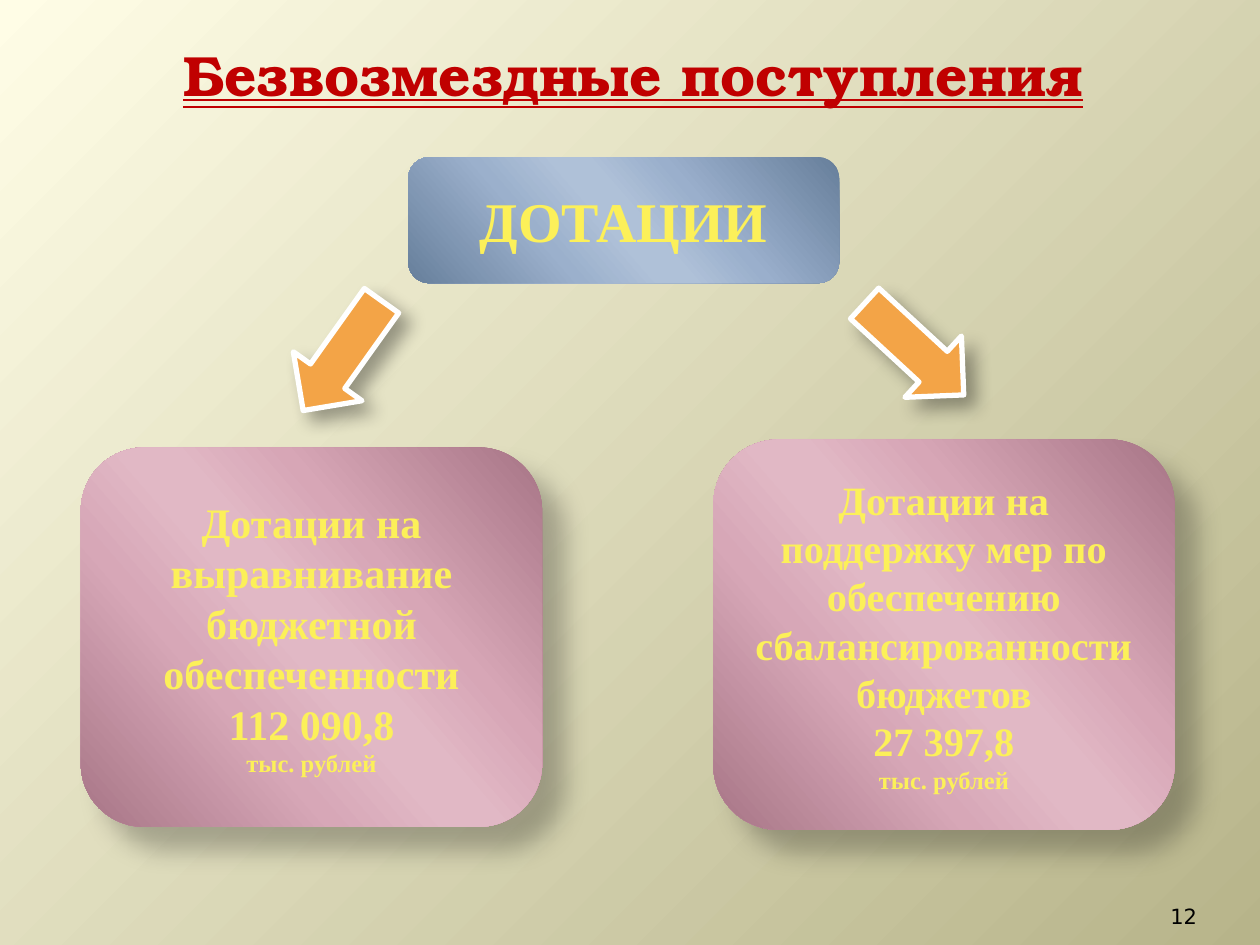
from lxml.etree import SubElement
from pptx import Presentation
from pptx.dml.color import RGBColor
from pptx.enum.shapes import MSO_SHAPE
from pptx.enum.text import MSO_ANCHOR, MSO_UNDERLINE, PP_ALIGN
from pptx.oxml.ns import qn
from pptx.util import Cm, Pt

RED = RGBColor(0xC0, 0x00, 0x00)
BLACK = RGBColor(0x00, 0x00, 0x00)
WHITE = RGBColor(0xFF, 0xFF, 0xFF)
YELLOW = RGBColor(0xFC, 0xF0, 0x59)
ORANGE = RGBColor(0xF3, 0xA4, 0x47)
CREAM = RGBColor(0xFF, 0xFD, 0xE6)
OLIVE = RGBColor(0xB7, 0xB4, 0x8A)
BLUES = [RGBColor.from_string(c) for c in ("677F9B", "9AAFCC", "AFC1D8", "AFC1D8", "9BB0CC", "677F9B")]
PINKS = [RGBColor.from_string(c) for c in ("A77586", "D7A6B6", "E1B8C5", "E1B8C5", "D7A7B7", "A77586")]
GLOSS_STOPS = (0, 33, 47, 53, 68, 100)
BOX_SHADOW = (26, 15, 18)
ARROW_SHADOW = (35, 10.2, 8)


class SlideBuilder:
    """Holds the shared style and the current slide, and adds each kind of element."""

    label_format = {"name": "Times New Roman", "bold": True}

    def __init__(self, presentation):
        self.slide = presentation.slides.add_slide(presentation.slide_layouts[6])

    def gradient(self, fill, parent, stops, colors, angle=None):
        fill.gradient()
        gradient = parent.find(".//" + qn("a:gradFill"))
        for child in list(gradient):
            gradient.remove(child)
        stop_list = SubElement(gradient, qn("a:gsLst"))
        for position, color in zip(stops, colors):
            stop = SubElement(stop_list, qn("a:gs"), pos=str(position * 1000))
            SubElement(stop, qn("a:srgbClr"), val=str(color))
        if angle is None:
            circle = SubElement(gradient, qn("a:path"), path="circle")
            SubElement(circle, qn("a:fillToRect"), r="100000", b="100000")
        else:
            SubElement(gradient, qn("a:lin"), ang=str(angle * 60000), scaled="0")

    def background(self, *colors):
        self.gradient(self.slide.background.fill, self.slide.element, (0, 100), colors)

    def shadow(self, shape, opacity, blur, distance):
        shape.shadow.inherit = False
        effects = shape.element.spPr.find(qn("a:effectLst"))
        outer = SubElement(effects, qn("a:outerShdw"), blurRad=str(Pt(blur)), dist=str(Pt(distance)),
                           dir=str(45 * 60000), algn="tl", rotWithShape="0")
        color = SubElement(outer, qn("a:srgbClr"), val=str(BLACK))
        SubElement(color, qn("a:alpha"), val=str(opacity * 1000))

    def set_lines(self, shape, lines, color, formats, align=PP_ALIGN.CENTER, anchor=MSO_ANCHOR.MIDDLE):
        frame = shape.text_frame
        frame.word_wrap = True
        frame.vertical_anchor = anchor
        for index, (text, size) in enumerate(lines):
            paragraph = frame.add_paragraph() if index else frame.paragraphs[0]
            paragraph.alignment = align
            run = paragraph.add_run()
            run.text = text
            for name, value in {**formats, "size": Pt(size)}.items():
                setattr(run.font, name, value)
            run.font.color.rgb = color

    def text(self, place, text, size, color, formats, **layout):
        box = self.slide.shapes.add_textbox(*map(Cm, place))
        self.set_lines(box, [(text, size)], color, formats, **layout)
        return box

    def box(self, place, colors, lines, shadow=None):
        shape = self.slide.shapes.add_shape(MSO_SHAPE.ROUNDED_RECTANGLE, *map(Cm, place))
        self.gradient(shape.fill, shape.element.spPr, GLOSS_STOPS, colors, 139)
        shape.line.fill.background()
        shape.shadow.inherit = False
        if shadow:
            self.shadow(shape, *shadow)
        self.set_lines(shape, lines, YELLOW, self.label_format)

    def arrow(self, place, rotation):
        shape = self.slide.shapes.add_shape(MSO_SHAPE.RIGHT_ARROW, *map(Cm, place))
        shape.rotation = rotation
        shape.fill.solid()
        shape.fill.fore_color.rgb = ORANGE
        shape.line.color.rgb = WHITE
        shape.line.width = Pt(3)
        self.shadow(shape, *ARROW_SHADOW)


def main():
    presentation = Presentation()
    presentation.slide_width, presentation.slide_height = Cm(25.4), Cm(19.05)
    builder = SlideBuilder(presentation)
    builder.background(CREAM, OLIVE)
    builder.text((1.4, 0.76, 22.73, 1.47), "Безвозмездные поступления", 32.4, RED,
                 {"name": "TeX Gyre Bonum", "bold": True, "underline": MSO_UNDERLINE.DOUBLE_LINE})
    number = builder.text((22.02, 17.83, 2.11, 1.02), "12", 12, BLACK, {"name": "DejaVu Sans"},
                          align=PP_ALIGN.RIGHT, anchor=MSO_ANCHOR.BOTTOM)
    number.text_frame.margin_left = number.text_frame.margin_right = 0

    builder.box((8.23, 3.17, 8.69, 2.54), BLUES, [("ДОТАЦИИ", 32)])
    grants = [
        ((1.63, 9.02, 9.3, 7.65), 24, "Дотации на выравнивание бюджетной обеспеченности", "112 090,8"),
        ((14.38, 8.86, 9.3, 7.87), 23,
         "Дотации на поддержку мер по обеспечению сбалансированности бюджетов", "27 397,8"),
    ]
    for place, size, name, amount in grants:
        builder.box(place, PINKS, [(name, size), (amount, size), ("тыс. рублей", 14)], BOX_SHADOW)
    for place, rotation in [((5.54, 6.32, 2.72, 1.7), 125.5), ((17.07, 6.2, 2.72, 1.68), 42.7)]:
        builder.arrow(place, rotation)
    presentation.save("out.pptx")


if __name__ == "__main__":
    main()
